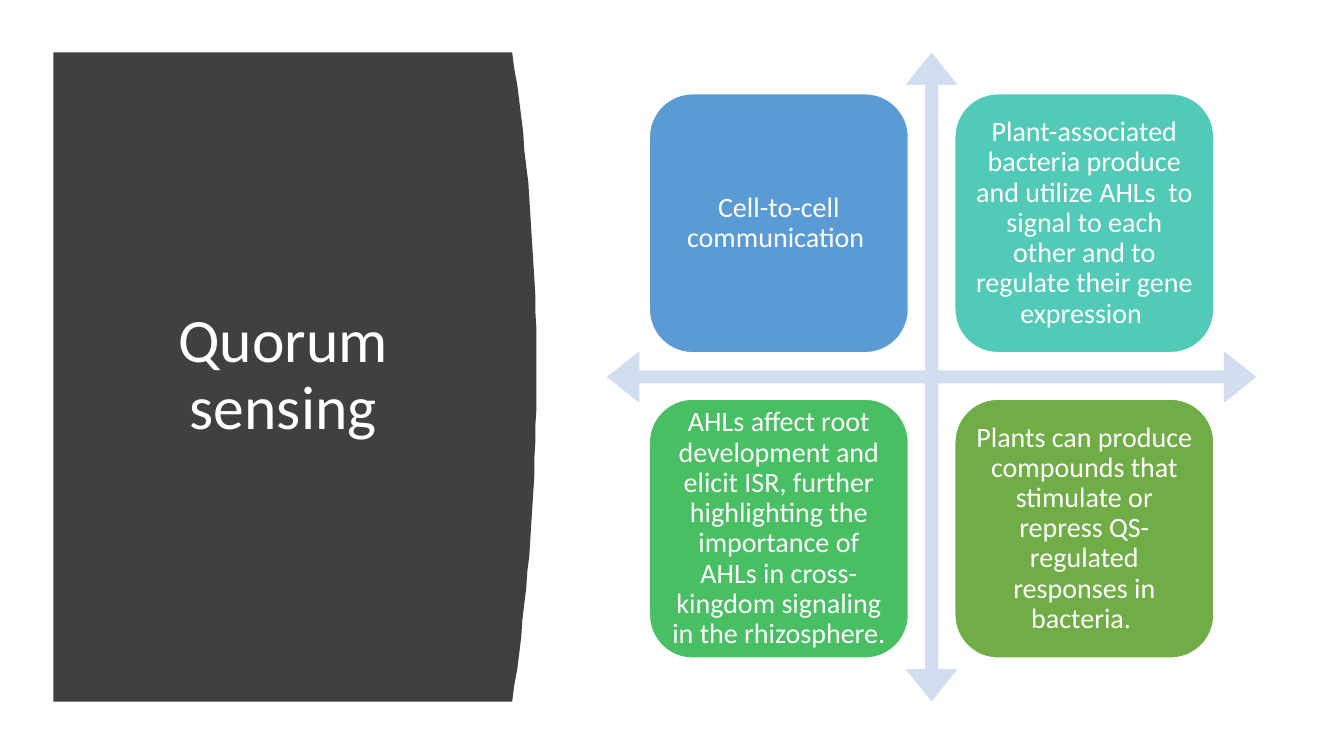
from pptx import Presentation
from pptx.dml.color import RGBColor
from pptx.enum.shapes import MSO_SHAPE
from pptx.enum.text import MSO_ANCHOR, MSO_AUTO_SIZE, PP_ALIGN
from pptx.util import Pt

EMU_PER_PX = 9144
COLORS = {
    "white": "FFFFFF",
    "panel": "404040",
    "arrows": "D2DEEF",
    "blue": "5B9BD5",
    "teal": "52CAB8",
    "green": "49BF64",
    "olive": "70AD47",
}
POINTS = [
    ("blue", "Cell-to-cell communication "),
    ("teal", "Plant-associated bacteria produce and utilize AHLs  to signal to each "
             "other and to regulate their gene expression "),
    ("green", "AHLs affect root development and elicit ISR, further highlighting the "
              "importance of AHLs in cross-kingdom signaling in the rhizosphere. "),
    ("olive", "Plants can produce compounds that stimulate or repress QS-regulated "
              "responses in bacteria. "),
]


def px(length):
    return round(length * EMU_PER_PX)


def color(name):
    return RGBColor.from_string(COLORS[name])


def write(frame, text, size, font="Calibri", ink="white", inset=None, after=0):
    frame.word_wrap = True
    frame.auto_size = MSO_AUTO_SIZE.NONE
    frame.vertical_anchor = MSO_ANCHOR.MIDDLE
    if inset is not None:
        frame.margin_left = frame.margin_right = px(inset)
        frame.margin_top = frame.margin_bottom = px(inset)
    paragraph = frame.paragraphs[0]
    paragraph.alignment = PP_ALIGN.CENTER
    paragraph.line_spacing = 0.9
    paragraph.space_before = Pt(0)
    paragraph.space_after = Pt(after)
    run = paragraph.add_run()
    run.text = text
    run.font.name = font
    run.font.size = Pt(size)
    run.font.color.rgb = color(ink)


class SlideBuilder:
    def __init__(self, slide):
        self.slide = slide
        self.shapes = slide.shapes

    def paint(self, shape, fill, outline=None):
        shape.shadow.inherit = False
        shape.fill.solid()
        shape.fill.fore_color.rgb = color(fill)
        if outline:
            shape.line.color.rgb = color(outline)
            shape.line.width = Pt(1)
        else:
            shape.line.fill.background()

    def curved_panel(self, left, top, edge, bottom, bulge, peak, steps=40):
        curve = []
        for step in range(steps + 1):
            y = top + (bottom - top) * step / steps
            reach = (peak - top) if y < peak else (bottom - peak)
            curve.append((edge + bulge * (1 - ((y - peak) / reach) ** 2), y))
        outline = self.shapes.build_freeform(left, top, scale=EMU_PER_PX)
        outline.add_line_segments(curve + [(left, bottom)], close=True)
        self.paint(outline.convert_to_shape(), "panel")

    def title(self, text, left, top, width, height):
        heading = self.shapes.title
        heading.left, heading.top = px(left), px(top)
        heading.width, heading.height = px(width), px(height)
        write(heading.text_frame, text, 44)
        tree = heading._element.getparent()
        tree.append(heading._element)

    def cross(self, left, top, side):
        arrows = self.shapes.add_shape(
            MSO_SHAPE.QUAD_ARROW, px(left), px(top), px(side), px(side))
        for index, ratio in enumerate((0.02, 0.04, 0.05)):
            arrows.adjustments[index] = ratio
        self.paint(arrows, "arrows")

    def card(self, text, fill, left, top, side):
        card = self.shapes.add_shape(
            MSO_SHAPE.ROUNDED_RECTANGLE, px(left), px(top), px(side), px(side))
        self.paint(card, fill, outline="white")
        write(card.text_frame, text, 20, inset=8, after=7)


def main():
    deck = Presentation()
    deck.slide_width, deck.slide_height = px(1333), px(750)
    builder = SlideBuilder(deck.slides.add_slide(deck.slide_layouts[5]))
    builder.curved_panel(53, 52, 508, 696, bulge=24, peak=370)
    builder.title("Quorum sensing", 94, 111, 374, 524)
    builder.cross(602, 52, 644)
    for index, (fill, text) in enumerate(POINTS):
        row, column = divmod(index, 2)
        builder.card(text, fill, 644 + 303 * column, 93 + 303 * row, 257)
    deck.save("out.pptx")


if __name__ == "__main__":
    main()
